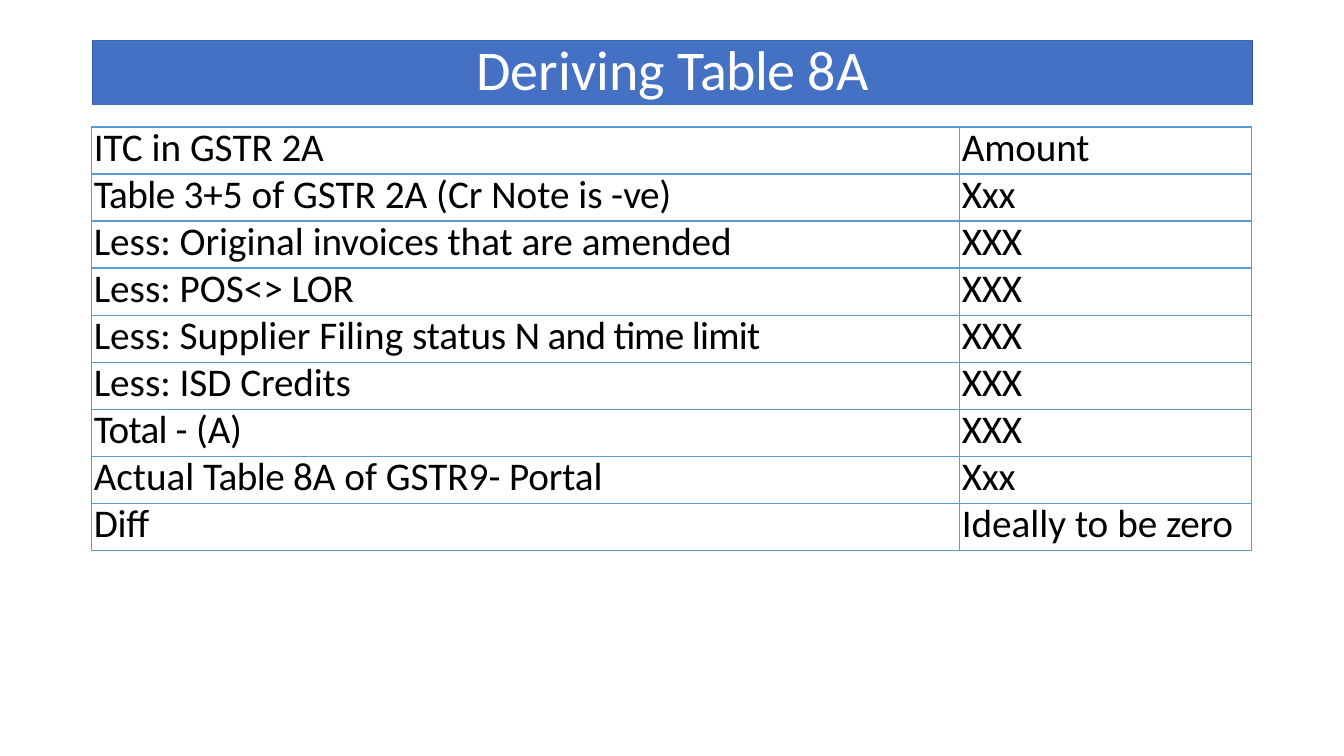
"""Build the slide that derives Table 8A from GSTR 2A."""
import pptx
import pptx.dml.color
import pptx.enum.shapes
import pptx.enum.text
import pptx.oxml
import pptx.oxml.ns
import pptx.util

Inches, Pt = pptx.util.Inches, pptx.util.Pt

TITLE = [("Deriving ", 0), ("Table ", -0.3), ("8A", -0.2)]
ROWS = [
    ([("ITC in GSTR ", 0), ("2A", -0.2)], [("Amount", -0.1)]),
    ([("Table ", -0.4), ("3+5 of GSTR 2A (Cr Note is", 0), (" -", -0.1), ("ve)", -0.2)],
     [("Xxx", -0.2)]),
    ([("Less: Original ", 0), ("invoices ", -0.1), ("that are ", 0), ("amended", -0.1)],
     [("XXX", -0.2)]),
    ([("Less: POS<> ", 0), ("LOR", -0.2)], [("XXX", -0.2)]),
    ([("Less: Supplier Filing ", 0), ("status ", -0.1), ("N and time limit", -0.5)],
     [("XXX", -0.2)]),
    ([("Less: ISD ", 0), ("Credits", -0.1)], [("XXX", -0.2)]),
    ([("Total ", -0.5), ("-", 0), (" (A)", -0.2)], [("XXX", -0.2)]),
    ([("Actual ", 0), ("Table ", -0.4), ("8A of GSTR9-", 0), (" Portal", -0.1)],
     [("Xxx", -0.2)]),
    ([("Diff", -0.2)], [("Ideally to be ", 0), ("zero", -0.2)]),
]
THEME = {
    "font": "Calibri", "title_size": 40, "title_leading": 42.1,
    "cell_size": 28, "cell_leading": 32.1,
    "banner": "4471C4", "banner_line": "2E528F", "banner_line_width": 0.96,
    "title": "FFFFFF", "text": "000000", "border": "5B9BD4", "border_width": 1,
}
BANNER = (0.92, 0.4, 11.5, 0.64)
TABLE = (0.91, 1.26, 11.5, 4.2)
COLUMNS = (8.61, 2.89)
INDENT = 0.02


def rgb(name):
    return pptx.dml.color.RGBColor.from_string(THEME[name])


def write(tf, runs, size, leading, color):
    p = tf.paragraphs[0]
    p.line_spacing = Pt(leading)
    for text, spacing in runs:
        r = p.add_run()
        r.text = text
        r.font.name, r.font.size = THEME["font"], Pt(size)
        r.font.bold = False
        r.font.color.rgb = rgb(color)
        if spacing:
            r._r.get_or_add_rPr().set("spc", str(round(spacing * 100)))
    return p


def add_borders(cell):
    tcPr = cell._tc.get_or_add_tcPr()
    for i, side in enumerate(("lnL", "lnR", "lnT", "lnB")):
        tcPr.insert(i, pptx.oxml.parse_xml(
            f'<a:{side} {pptx.oxml.ns.nsdecls("a")} w="{Pt(THEME["border_width"])}">'
            f'<a:solidFill><a:srgbClr val="{THEME["border"]}"/></a:solidFill></a:{side}>'))


def add_banner(slide):
    x, y, w, h = map(Inches, BANNER)
    builder = slide.shapes.build_freeform(x, y + h)
    builder.add_line_segments([(x + w, y + h), (x + w, y), (x, y)], close=True)
    outline = builder.convert_to_shape()
    outline.shadow.inherit = False
    outline.fill.background()
    outline.line.color.rgb = rgb("banner_line")
    outline.line.width = Pt(THEME["banner_line_width"])

    sp = slide.shapes.add_shape(pptx.enum.shapes.MSO_SHAPE.RECTANGLE, x, y, w, h)
    sp.shadow.inherit = False
    sp.fill.solid()
    sp.fill.fore_color.rgb = rgb("banner")
    sp.line.fill.background()
    tf = sp.text_frame
    tf.word_wrap = True
    tf.margin_left = tf.margin_right = tf.margin_top = tf.margin_bottom = 0
    tf.vertical_anchor = pptx.enum.text.MSO_ANCHOR.MIDDLE
    p = write(tf, TITLE, THEME["title_size"], THEME["title_leading"], "title")
    p.alignment = pptx.enum.text.PP_ALIGN.CENTER


def add_amounts(slide):
    frame = slide.shapes.add_table(len(ROWS), len(COLUMNS), *map(Inches, TABLE))
    table = frame.table
    table.first_row = table.horz_banding = False
    for column, width in zip(table.columns, COLUMNS):
        column.width = Inches(width)
    for row, texts in zip(table.rows, ROWS):
        row.height = Inches(TABLE[3] / len(ROWS))
        for cell, runs in zip(row.cells, texts):
            cell.margin_left = cell.margin_right = 0
            cell.margin_top = cell.margin_bottom = 0
            cell.fill.background()
            add_borders(cell)
            p = write(cell.text_frame, runs, THEME["cell_size"],
                      THEME["cell_leading"], "text")
            p._p.get_or_add_pPr().set("marL", str(Inches(INDENT)))


def main():
    prs = pptx.Presentation()
    prs.slide_width, prs.slide_height = Inches(13.33), Inches(7.5)
    s = prs.slides.add_slide(prs.slide_layouts[6])
    add_banner(s)
    add_amounts(s)
    prs.save("out.pptx")


if __name__ == "__main__":
    main()
